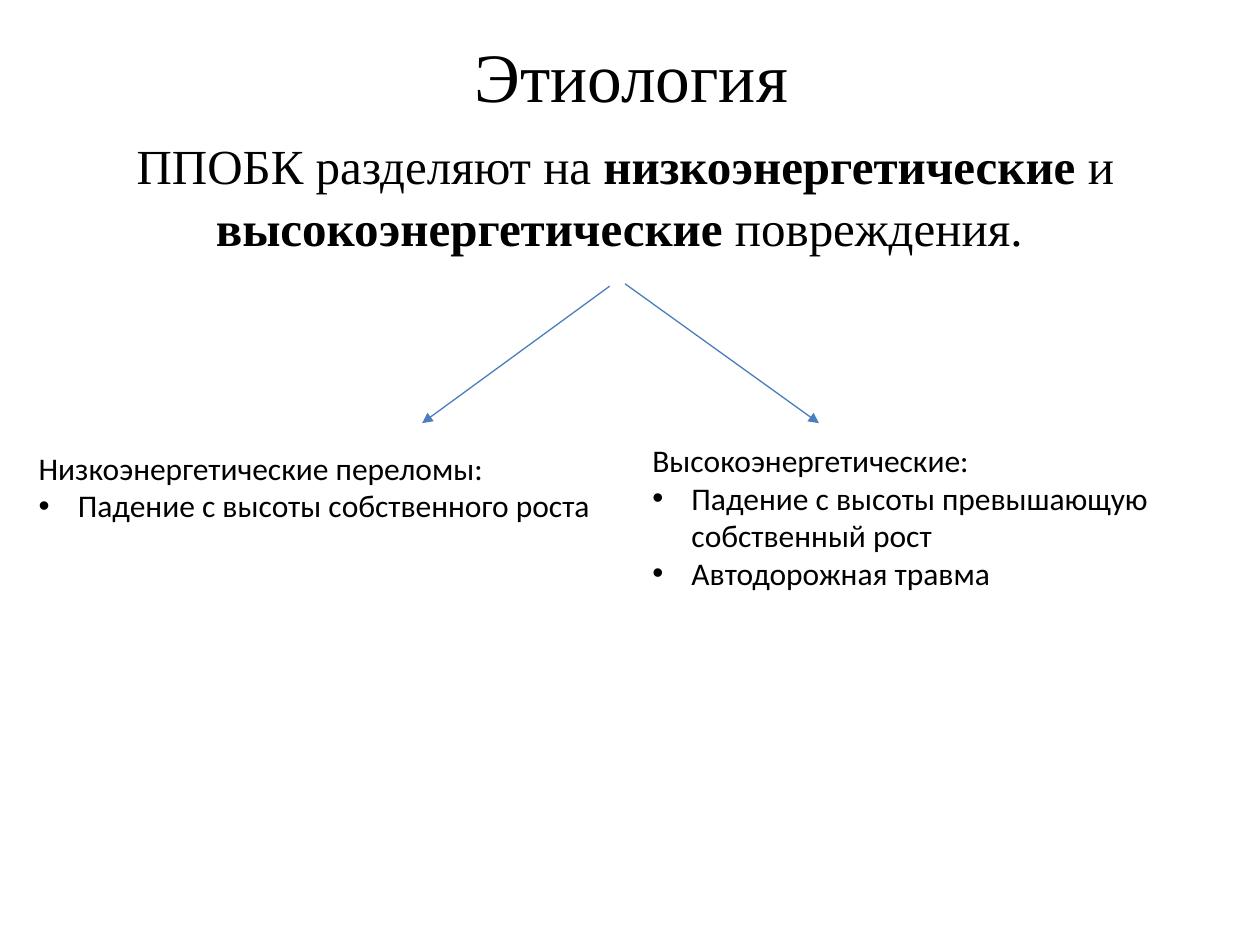
from dataclasses import dataclass
from pptx import Presentation
from pptx.dml.color import RGBColor
from pptx.enum.shapes import MSO_CONNECTOR
from pptx.enum.text import MSO_ANCHOR, MSO_AUTO_SIZE, PP_ALIGN
from pptx.oxml.ns import qn
from pptx.util import Cm, Pt
from lxml.etree import SubElement


@dataclass(frozen=True)
class Theme:
    ink: RGBColor = RGBColor(0, 0, 0)
    blue: RGBColor = RGBColor(0x4B, 0x7E, 0xBC)
    serif: str = "Times New Roman"
    sans: str = "Calibri"
    head: float = 39.6
    lead: float = 28
    note: float = 18
    rule: float = 0.75


@dataclass(frozen=True)
class Box:
    left: float
    top: float
    width: float
    height: float

    def place(self, shape):
        shape.left, shape.top = Cm(self.left), Cm(self.top)
        shape.width, shape.height = Cm(self.width), Cm(self.height)


THEME = Theme()


def style(run, face, size, bold=False):
    font = run.font
    font.name, font.size, font.bold = face, Pt(size), bold
    font.color.rgb = THEME.ink


def add_title(slide, box, text):
    shape = slide.shapes.title
    box.place(shape)
    frame = shape.text_frame
    frame.text = text
    frame.vertical_anchor = MSO_ANCHOR.MIDDLE
    para = frame.paragraphs[0]
    para.alignment = PP_ALIGN.CENTER
    style(para.runs[0], THEME.serif, THEME.head)


def add_lead(slide, box, parts):
    shape = slide.placeholders[1]
    box.place(shape)
    para = shape.text_frame.paragraphs[0]
    para.alignment = PP_ALIGN.CENTER
    para.line_spacing = 1.05
    para.space_before = Pt(0)
    props = para._p.get_or_add_pPr()
    props.set("marL", "0")
    props.set("indent", "0")
    SubElement(props, qn("a:buNone"))
    for text, bold in parts:
        run = para.add_run()
        run.text = text
        style(run, THEME.serif, THEME.lead, bold)


def add_arrow(slide, start, end):
    ends = [Cm(value) for value in (*start, *end)]
    arrow = slide.shapes.add_connector(MSO_CONNECTOR.STRAIGHT, *ends)
    arrow.line.color.rgb = THEME.blue
    arrow.line.width = Pt(THEME.rule)
    SubElement(arrow.line._get_or_add_ln(), qn("a:tailEnd"), type="triangle")
    SubElement(arrow._element.spPr, qn("a:effectLst"))


def add_fork(slide, box):
    foot = box.top + box.height
    right = box.left + box.width
    add_arrow(slide, (box.left + 3.78, box.top + 0.05), (box.left, foot))
    add_arrow(slide, (right - 3.91, box.top), (right, foot))


def add_bullet(para):
    props = para._p.get_or_add_pPr()
    props.set("marL", str(Cm(0.79)))
    props.set("indent", str(-Cm(0.79)))
    SubElement(props, qn("a:buFont"), typeface="Arial")
    SubElement(props, qn("a:buChar"), char="•")


def add_group(slide, box, lines, wrap):
    shape = slide.shapes.add_textbox(0, 0, 0, 0)
    box.place(shape)
    frame = shape.text_frame
    frame.text = "\n".join(lines)
    frame.word_wrap = wrap
    frame.auto_size = MSO_AUTO_SIZE.SHAPE_TO_FIT_TEXT
    for rank, para in enumerate(frame.paragraphs):
        if rank:
            add_bullet(para)
        style(para.runs[0], THEME.sans, THEME.note)


def main():
    deck = Presentation()
    deck.slide_width, deck.slide_height = Cm(25.4), Cm(19.05)
    slide = deck.slides.add_slide(deck.slide_layouts[1])
    add_title(slide, Box(5.51, 0.74, 14.43, 1.55), "Этиология")
    add_lead(slide, Box(1.9, 2.55, 21.41, 3.2), [
        ("ППОБК разделяют на ", False),
        ("низкоэнергетические", True),
        (" и ", False),
        ("высокоэнергетические", True),
        (" повреждения. ", False),
    ])
    add_fork(slide, Box(8.51, 5.72, 8, 2.81))
    add_group(slide, Box(0.53, 8.92, 11.76, 1.8), [
        "Низкоэнергетические переломы:",
        "Падение с высоты собственного роста",
    ], False)
    add_group(slide, Box(12.9, 8.76, 11.61, 3.33), [
        "Высокоэнергетические:",
        "Падение с высоты превышающую собственный рост",
        "Автодорожная травма",
    ], True)
    deck.save("out.pptx")


if __name__ == "__main__":
    main()
